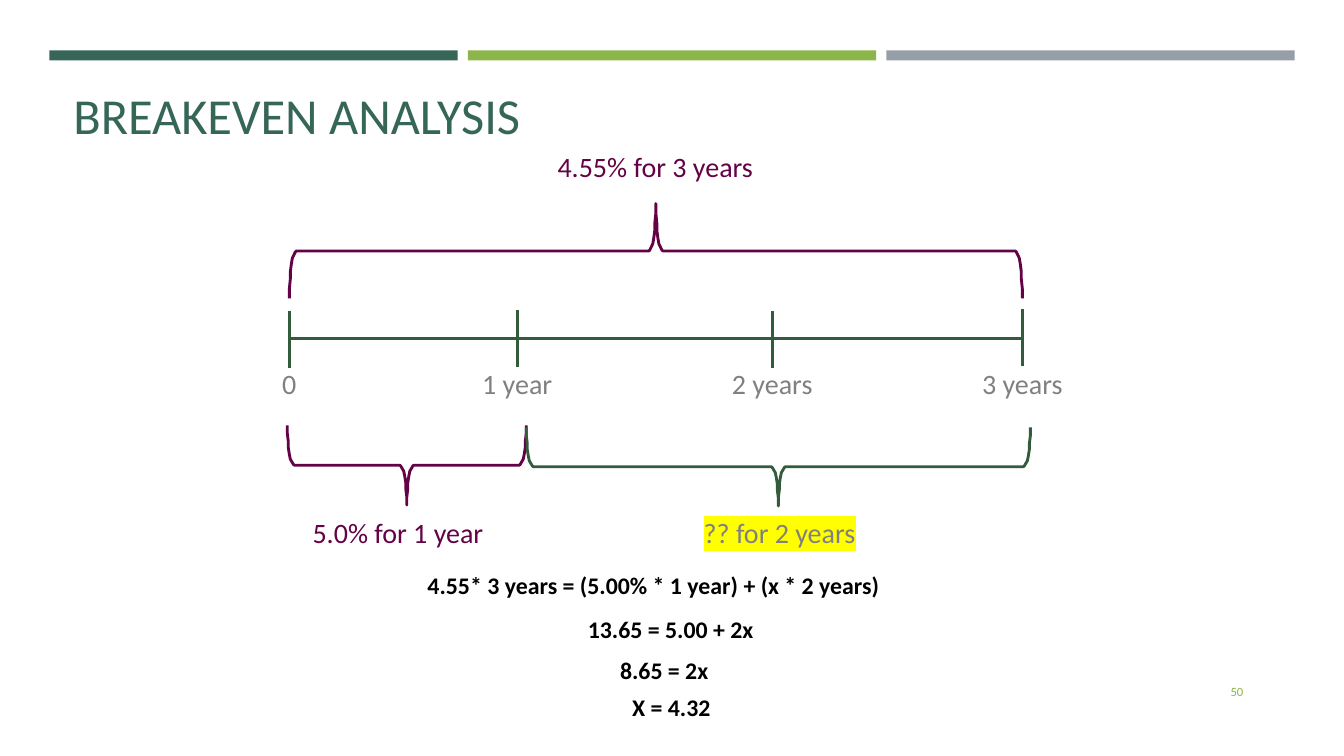
import dataclasses
import typing

import lxml.etree
import pptx
import pptx.dml.color
import pptx.enum.shapes
import pptx.enum.text
import pptx.oxml.ns
import pptx.slide
import pptx.text.text
import pptx.util

Inches = pptx.util.Inches
Pt = pptx.util.Pt
qn = pptx.oxml.ns.qn
ALIGN = pptx.enum.text.PP_ALIGN
ANCHOR = pptx.enum.text.MSO_ANCHOR

HUES = {
    "teal": "366658", "lime": "8CB64A", "slate": "969FA7", "green": "325C3C",
    "plum": "640246", "gray": "808080", "black": "000000", "yellow": "FFFF00",
}
FONT = "Calibri"
STROKE = 2.04
# Curl of a brace end: inches across, share of the half height
CURL = [(0, 0), (0, .2), (.01, .41), (.01, .56), (.02, .72),
        (.03, .85), (.06, .98), (.07, 1)]


@dataclasses.dataclass
class Brace:
    left: float
    right: float
    base: float
    tip: float
    hue: str


@dataclasses.dataclass
class Tick:
    x: float
    top: float
    label: str
    width: float


@dataclasses.dataclass
class Para:
    text: str
    size: float
    hue: str
    bold: bool = False
    before: float = 1
    indent: float = 0.01
    align: typing.Optional[ALIGN] = None
    tab: float = 0


def color(name: str) -> pptx.dml.color.RGBColor:
    return pptx.dml.color.RGBColor.from_string(HUES[name])


def add_bar(slide: pptx.slide.Slide, left: float, hue: str) -> None:
    bar = slide.shapes.add_shape(
        pptx.enum.shapes.MSO_SHAPE.RECTANGLE,
        Inches(left), Inches(0.5), Inches(4.05), Inches(0.1))
    bar.shadow.inherit = False
    bar.fill.solid()
    bar.fill.fore_color.rgb = color(hue)
    bar.line.fill.background()


def add_line(slide: pptx.slide.Slide, x1: float, y1: float,
             x2: float, y2: float) -> None:
    line = slide.shapes.add_connector(
        pptx.enum.shapes.MSO_CONNECTOR.STRAIGHT,
        Inches(x1), Inches(y1), Inches(x2), Inches(y2))
    line.line.color.rgb = color("green")
    line.line.width = Pt(STROKE)
    lxml.etree.SubElement(line._element.spPr, qn("a:effectLst"))


def add_brace(slide: pptx.slide.Slide, item: Brace) -> None:
    mid = (item.left + item.right) / 2
    half = (item.tip - item.base) / 2
    start = [(item.left + dx, item.base + dy * half) for dx, dy in CURL]
    point = [(mid - dx, item.tip - dy * half) for dx, dy in reversed(CURL)]
    side = start + point
    other = [(2 * mid - x, y) for x, y in reversed(side)]
    dots = [(Inches(x), Inches(y)) for x, y in side + other[1:]]
    form = slide.shapes.build_freeform(*dots[0])
    form.add_line_segments(dots[1:], close=False)
    shape = form.convert_to_shape()
    shape.shadow.inherit = False
    shape.fill.background()
    shape.line.color.rgb = color(item.hue)
    shape.line.width = Pt(STROKE)


def add_text(slide: pptx.slide.Slide, left: float, top: float, width: float,
             height: float, paras: list[Para], anchor: ANCHOR = ANCHOR.TOP,
             inset: bool = False) -> pptx.text.text.TextFrame:
    box = slide.shapes.add_textbox(
        Inches(left), Inches(top), Inches(width), Inches(height))
    frame = box.text_frame
    frame.word_wrap = True
    frame.vertical_anchor = anchor
    if not inset:
        frame.margin_left = frame.margin_right = frame.margin_bottom = 0
        frame.margin_top = Inches(0.01)
    for i, item in enumerate(paras):
        para = frame.paragraphs[0] if i == 0 else frame.add_paragraph()
        para.add_run().text = item.text
        props = para._p.get_or_add_pPr()
        if not inset and item.align is None:
            props.set("marL", str(Inches(item.indent)))
        if item.tab:
            tabs = lxml.etree.SubElement(props, qn("a:tabLst"))
            lxml.etree.SubElement(tabs, qn("a:tab"),
                                  pos=str(Inches(item.tab)), algn="l")
        para.alignment = item.align
        para.space_before = Pt(item.before)
        para.font.name = FONT
        para.font.size = Pt(item.size)
        para.font.bold = item.bold
        para.font.color.rgb = color(item.hue)
    return frame


def add_mark(para: pptx.text.text._Paragraph, text: str) -> None:
    run = para.add_run()
    run.text = text
    run.font.color.rgb = color("gray")
    glow = lxml.etree.SubElement(run.font._element, qn("a:highlight"))
    lxml.etree.SubElement(glow, qn("a:srgbClr"), val=HUES["yellow"])


def main() -> None:
    deck = pptx.Presentation()
    deck.slide_width, deck.slide_height = Inches(13.33), Inches(7.5)
    slide = deck.slides.add_slide(deck.slide_layouts[6])

    # Top bars and title
    for i, hue in enumerate(["teal", "lime", "slate"]):
        add_bar(slide, 0.49 + 4.15 * i, hue)
    add_text(slide, 0.63, 0.58, 11.96, 0.9,
             [Para("BREAKEVEN ANALYSIS", 36, "teal", before=0)],
             ANCHOR.BOTTOM, inset=True)

    # Timeline
    ticks = [Tick(2.87, 3.09, "0", 0.17), Tick(5.13, 3.08, "1 year", 0.72),
             Tick(7.66, 3.09, "2 years", 0.83),
             Tick(10.14, 3.07, "3 years", 0.83)]
    add_line(slide, ticks[0].x, 3.36, ticks[-1].x, 3.36)
    for tick in ticks:
        add_line(slide, tick.x, tick.top, tick.x, tick.top + 0.56)
        add_text(slide, tick.x - tick.width / 2, 3.63, tick.width, 0.36,
                 [Para(tick.label, 20, "gray", align=ALIGN.CENTER)])

    # Braces
    for brace in [Brace(2.85, 5.22, 4.22, 5.01, "plum"),
                  Brace(5.22, 10.22, 4.24, 5.02, "green"),
                  Brace(2.87, 10.14, 2.96, 2.02, "plum")]:
        add_brace(slide, brace)

    # Rates and equations
    add_text(slide, 5.52, 1.47, 1.96, 0.36,
             [Para("4.55% for 3 years", 20, "plum")])
    rates = add_text(slide, 3.09, 5.1, 5.87, 1.7, [
        Para("5.0% for 1 year\t", 20, "plum", tab=3.88),
        Para("4.55* 3 years = (5.00% * 1 year) + (x * 2 years)",
             17, "black", True, 15.4, 1.15),
        Para("13.65 = 5.00 + 2x", 17, "black", True, 11.2, 2.74),
        Para("8.65 = 2x", 17, "black", True, 8.9, 3.06),
    ])
    add_mark(rates.paragraphs[0], "?? for 2 years")
    add_text(slide, 6.26, 6.86, 1.31, 0.3,
             [Para("X = 4.32", 17, "black", True)])

    # Page number
    add_text(slide, 11.28, 6.66, 1.15, 0.4,
             [Para("50", 9, "lime", before=0, align=ALIGN.RIGHT)],
             ANCHOR.MIDDLE, inset=True)

    deck.save("out.pptx")


if __name__ == "__main__":
    main()
